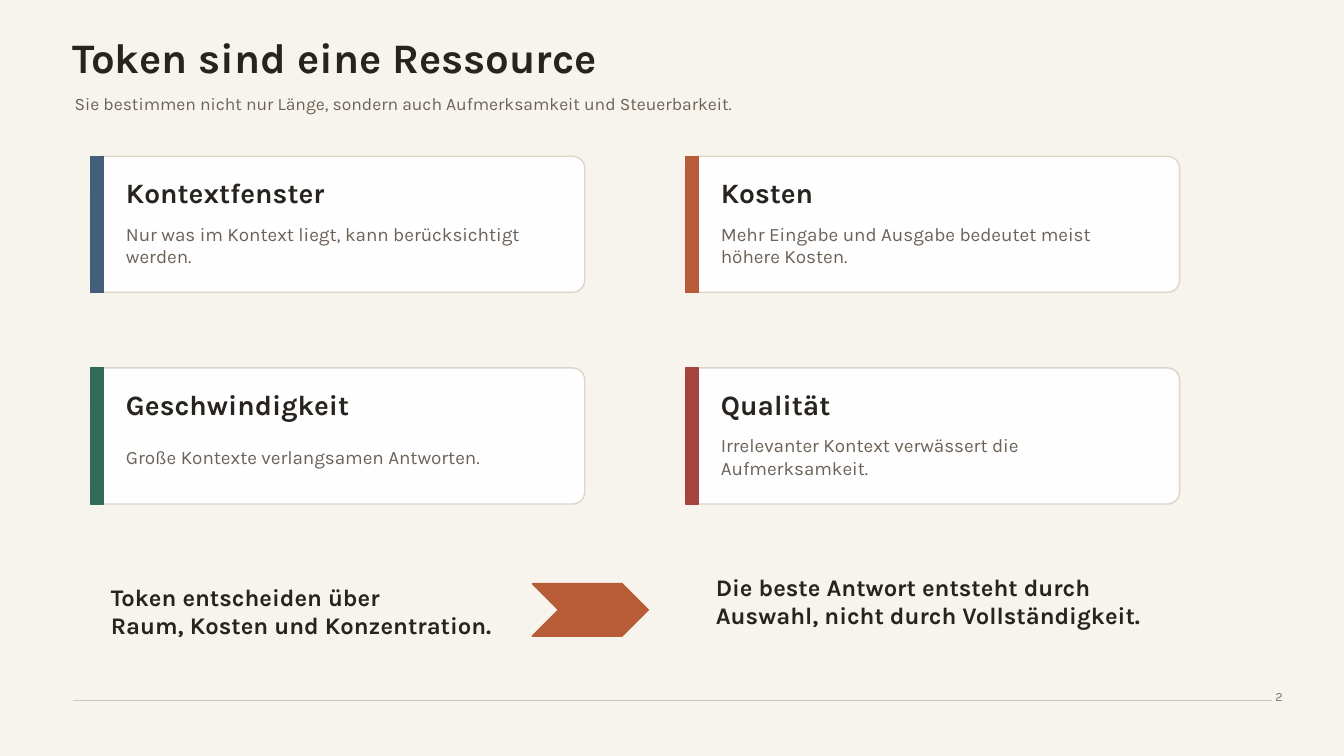
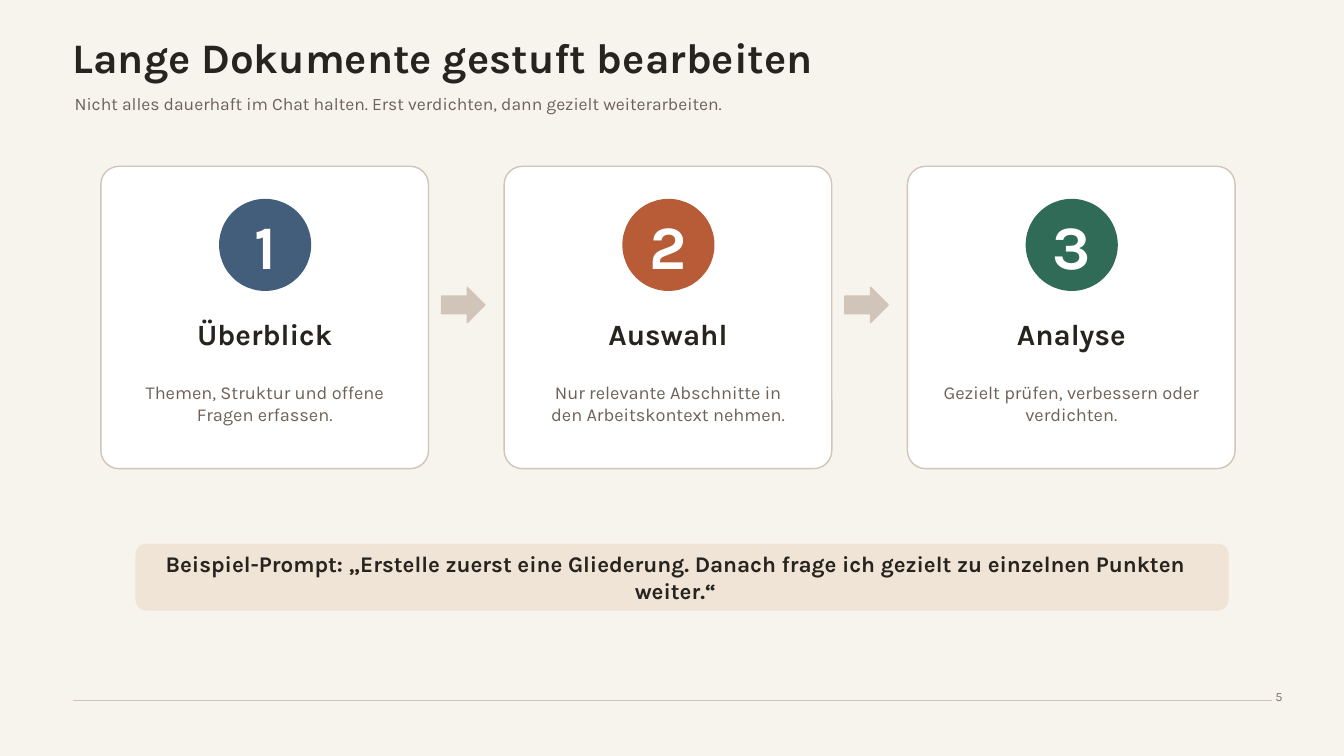
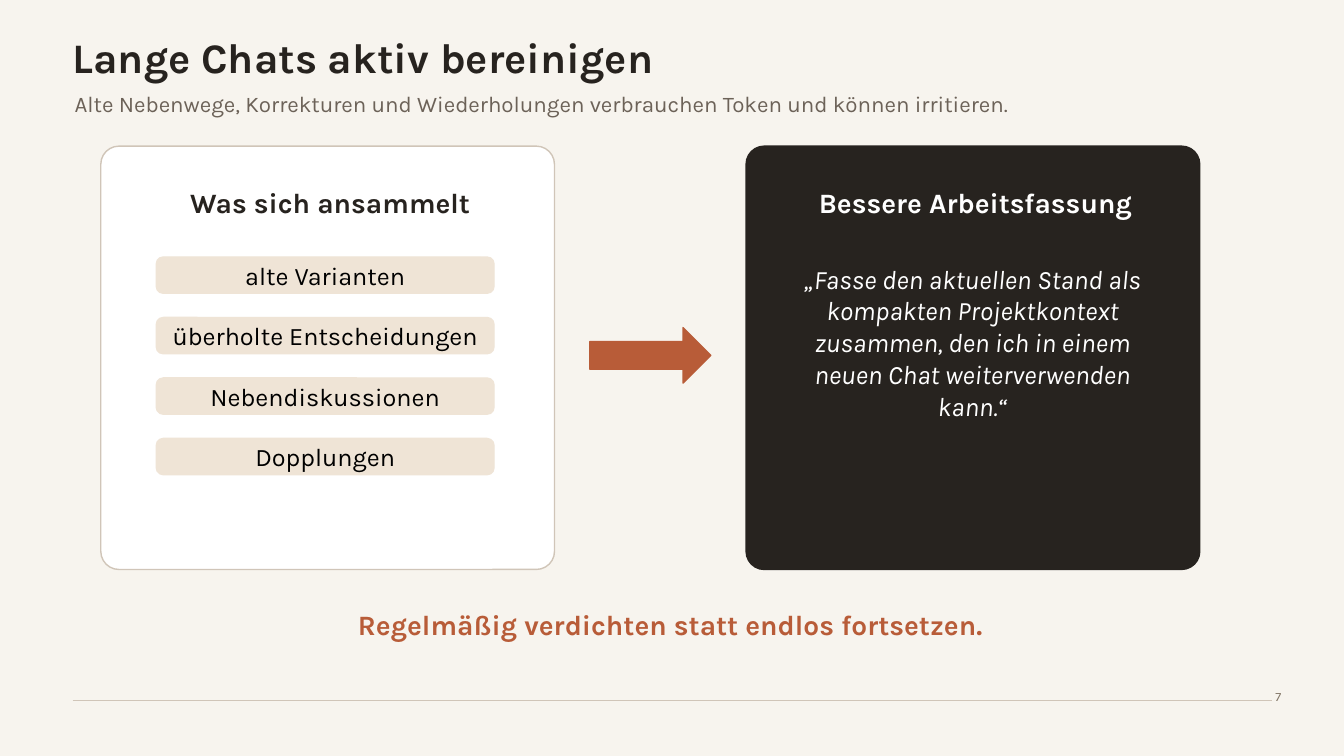
from pptx import Presentation
from pptx.dml.color import RGBColor
from pptx.enum import shapes, text
from pptx.oxml.ns import qn
from pptx.util import Inches, Pt
from lxml import etree

# Colours
PAPER = RGBColor(0xF7, 0xF4, 0xEE)
INK = RGBColor(0x27, 0x23, 0x1F)
MUTED = RGBColor(0x6C, 0x62, 0x58)
NUMBER = RGBColor(0x82, 0x76, 0x67)
RULE = RGBColor(0xD0, 0xC5, 0xB8)
EDGE = RGBColor(0xDE, 0xD4, 0xC8)
SAND = RGBColor(0xEF, 0xE4, 0xD6)
BLUE = RGBColor(0x42, 0x5E, 0x7B)
RUST = RGBColor(0xB8, 0x5C, 0x38)
GREEN = RGBColor(0x2F, 0x6B, 0x57)
RED = RGBColor(0xA3, 0x45, 0x3D)
WHITE = RGBColor(0xFF, 0xFF, 0xFF)
BLACK = RGBColor(0x00, 0x00, 0x00)

SHAPE = shapes.MSO_SHAPE
CENTER = text.PP_ALIGN.CENTER


class Deck:
    """Holds the style and the current slide."""

    font = "Karla"

    def __init__(self):
        self.prs = Presentation()
        self.prs.slide_width = Inches(13.33)
        self.prs.slide_height = Inches(7.5)
        self.s = None

    def slide(self, title, subtitle, number, subtitle_size=12.5):
        self.s = self.prs.slides.add_slide(self.prs.slide_layouts[6])
        fill = self.s.background.fill
        fill.solid()
        fill.fore_color.rgb = PAPER
        self.rule(0.72, 12.62, 6.95)
        self.text(title, 0.72, 0.35, 8.6, 0.42, 30, bold=True)
        self.text(subtitle, 0.74, 0.85, 10.6, 0.35, subtitle_size, MUTED)
        self.text(str(number), 12.65, 6.83, 0.67, 0.23, 9, NUMBER,
                  anchor=text.MSO_ANCHOR.TOP)

    def rule(self, x1, x2, y):
        line = self.s.shapes.add_connector(
            shapes.MSO_CONNECTOR.STRAIGHT,
            Inches(x1), Inches(y), Inches(x2), Inches(y))
        line.line.color.rgb = RULE
        line.line.width = Pt(1)
        etree.SubElement(line._element.spPr, qn("a:effectLst"))

    def shape(self, kind, x, y, w, h, fill, line=None):
        sp = self.s.shapes.add_shape(
            kind, Inches(x), Inches(y), Inches(w), Inches(h))
        sp.shadow.inherit = False
        sp.fill.solid()
        sp.fill.fore_color.rgb = fill
        sp.line.color.rgb = line or fill
        sp.line.width = Pt(1)
        return sp

    def panel(self, x, y, w, h, radius, fill=WHITE, line=None, opacity=None):
        sp = self.shape(SHAPE.ROUNDED_RECTANGLE, x, y, w, h, fill, line)
        sp.adjustments[0] = radius / min(w, h)
        if opacity:
            color = sp._element.spPr.find(qn("a:solidFill"))[0]
            etree.SubElement(color, qn("a:alpha"), val=str(opacity * 1000))

    def text(self, words, x, y, w, h, size, color=INK, bold=False,
             italic=False, align=None, anchor=text.MSO_ANCHOR.MIDDLE):
        box = self.s.shapes.add_textbox(
            Inches(x), Inches(y), Inches(w), Inches(h))
        tf = box.text_frame
        tf.word_wrap = True
        tf.vertical_anchor = anchor
        tf.margin_left = tf.margin_right = 0
        tf.margin_top = tf.margin_bottom = 0
        p = tf.paragraphs[0]
        p.text = words
        p.alignment = align
        p.font.name = self.font
        p.font.size = Pt(size)
        p.font.bold = bold
        p.font.italic = italic
        p.font.color.rgb = color

    def accent_card(self, x, y, heading, body, color):
        self.panel(x, y, 4.9, 1.35, 0.12, line=EDGE, opacity=98)
        self.shape(SHAPE.RECTANGLE, x, y, 0.13, 1.35, color)
        self.text(heading, x + 0.35, y + 0.22, 3.8, 0.28, 20, bold=True)
        self.text(body, x + 0.35, y + 0.67, 4, 0.42, 13.5, MUTED)

    def step_card(self, x, y, number, heading, body, color):
        self.panel(x, y, 3.25, 3, 0.18, line=RULE)
        self.shape(SHAPE.OVAL, x + 1.18, y + 0.33, 0.9, 0.9, color)
        self.text(str(number), x + 1.18, y + 0.6, 0.9, 0.35, 44, WHITE,
                  bold=True, align=CENTER)
        self.text(heading, x + 0.25, y + 1.49, 2.75, 0.35, 21,
                  bold=True, align=CENTER)
        self.text(body, x + 0.35, y + 2.05, 2.55, 0.6, 13, MUTED, align=CENTER)

    def chip(self, x, y, words):
        self.panel(x, y, 3.35, 0.36, 0.07, SAND)
        self.text(words, x + 0.15, y + 0.09, 3.05, 0.18, 18, BLACK,
                  align=CENTER)

    def column(self, x, heading, fill, line, color):
        self.panel(x, 1.45, 4.5, 4.2, 0.18, fill, line)
        self.text(heading, x + 0.35, 1.85, 3.85, 0.32, 20, color,
                  bold=True, align=CENTER)


def resource_slide(deck):
    deck.slide("Token sind eine Ressource",
               "Sie bestimmen nicht nur Länge, sondern auch Aufmerksamkeit "
               "und Steuerbarkeit.", 2)
    # Two-by-two grid of cards
    cards = [
        ("Kontextfenster",
         "Nur was im Kontext liegt, kann berücksichtigt werden.", BLUE),
        ("Kosten",
         "Mehr Eingabe und Ausgabe bedeutet meist höhere Kosten.", RUST),
        ("Geschwindigkeit", "Große Kontexte verlangsamen Antworten.", GREEN),
        ("Qualität",
         "Irrelevanter Kontext verwässert die Aufmerksamkeit.", RED),
    ]
    for i, card in enumerate(cards):
        row, col = divmod(i, 2)
        deck.accent_card(0.9 + 5.9 * col, 1.55 + 2.1 * row, *card)
    # Conclusion
    deck.shape(SHAPE.CHEVRON, 5.28, 5.79, 1.15, 0.52, RUST)
    deck.text("Token entscheiden über\nRaum, Kosten und Konzentration.",
              1.1, 5.92, 4.65, 0.28, 17, bold=True)
    deck.text("Die beste Antwort entsteht durch\n"
              "Auswahl, nicht durch Vollständigkeit.",
              7.1, 5.82, 4.9, 0.28, 17, bold=True)


def steps_slide(deck):
    deck.slide("Lange Dokumente gestuft bearbeiten",
               "Nicht alles dauerhaft im Chat halten. Erst verdichten, "
               "dann gezielt weiterarbeiten.", 5)
    # Three steps joined by arrows
    steps = [
        ("Überblick", "Themen, Struktur und offene Fragen erfassen.", BLUE),
        ("Auswahl",
         "Nur relevante Abschnitte in den Arbeitskontext nehmen.", RUST),
        ("Analyse", "Gezielt prüfen, verbessern oder verdichten.", GREEN),
    ]
    for i, step in enumerate(steps):
        x = 1 + 4 * i
        deck.step_card(x, 1.65, i + 1, *step)
        if i < len(steps) - 1:
            deck.shape(SHAPE.RIGHT_ARROW, x + 3.38, 2.85, 0.43, 0.35, RULE)
    # Example prompt
    deck.panel(1.35, 5.4, 10.83, 0.65, 0.1, SAND)
    deck.text("Beispiel-Prompt: „Erstelle zuerst eine Gliederung. Danach "
              "frage ich gezielt zu einzelnen Punkten weiter.“",
              1.4, 5.49, 10.6, 0.47, 16, bold=True, align=CENTER)


def cleanup_slide(deck):
    deck.slide("Lange Chats aktiv bereinigen",
               "Alte Nebenwege, Korrekturen und Wiederholungen verbrauchen "
               "Token und können irritieren.", 7, subtitle_size=16)
    # What piles up
    deck.column(1, "Was sich ansammelt", WHITE, RULE, INK)
    leftovers = ["alte Varianten", "überholte Entscheidungen",
                 "Nebendiskussionen", "Dopplungen"]
    for i, words in enumerate(leftovers):
        deck.chip(1.55, 2.55 + 0.6 * i, words)
    deck.shape(SHAPE.RIGHT_ARROW, 5.85, 3.25, 1.2, 0.55, RUST)
    # Better version
    deck.column(7.4, "Bessere Arbeitsfassung", INK, INK, WHITE)
    deck.text("„Fasse den aktuellen Stand als kompakten Projektkontext "
              "zusammen, den ich in einem neuen Chat weiterverwenden kann.“",
              7.92, 2.62, 3.45, 1.55, 19, WHITE, italic=True, align=CENTER)
    # Takeaway
    deck.text("Regelmäßig verdichten statt endlos fortsetzen.",
              2.5, 6.04, 8.3, 0.3, 20, RUST, bold=True, align=CENTER)


def main():
    deck = Deck()
    resource_slide(deck)
    steps_slide(deck)
    cleanup_slide(deck)
    deck.prs.save("out.pptx")


if __name__ == "__main__":
    main()
